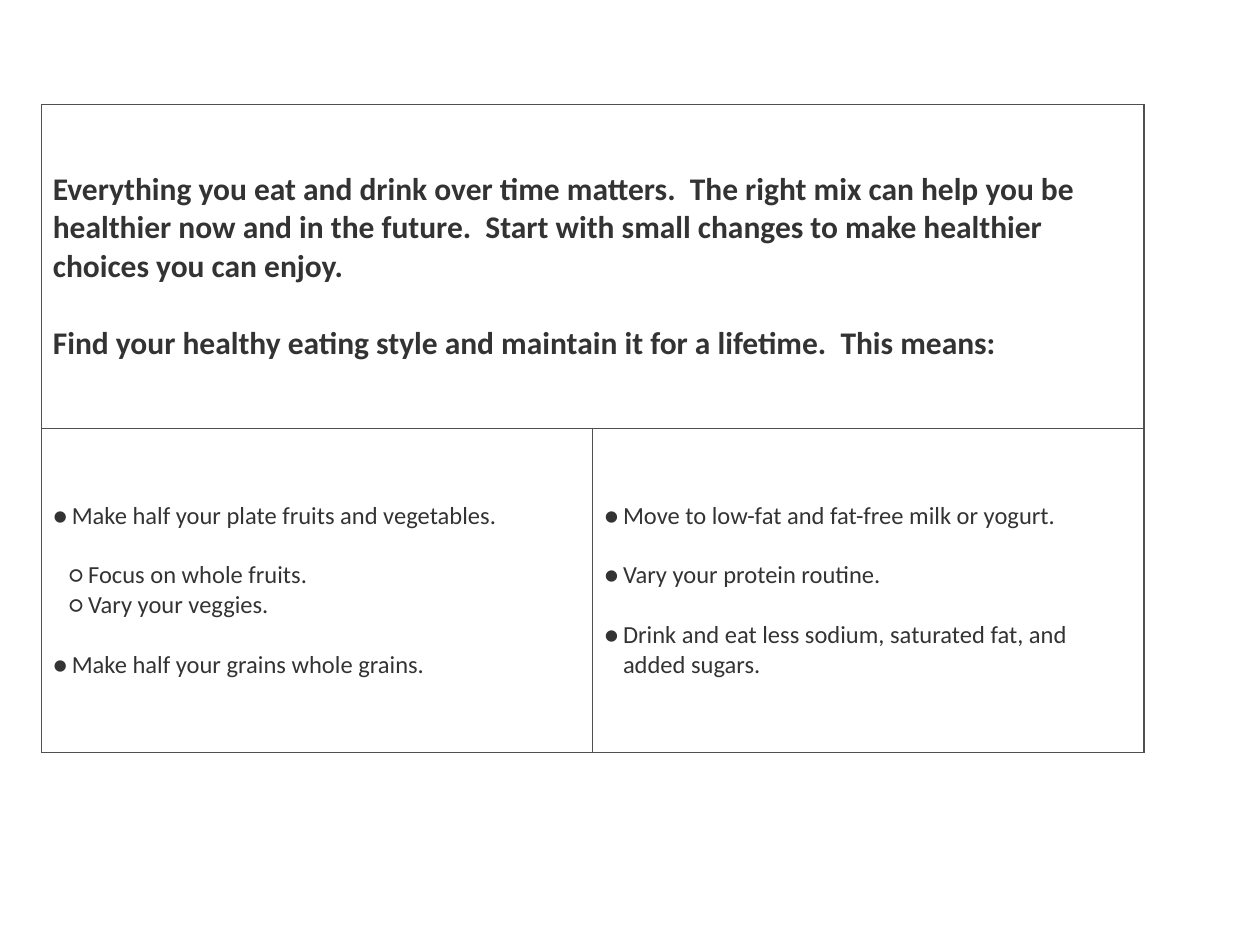
from dataclasses import dataclass

from lxml.etree import SubElement
from pptx import Presentation
from pptx.dml.color import RGBColor
from pptx.enum.text import MSO_ANCHOR
from pptx.oxml.ns import qn
from pptx.util import Inches, Pt


@dataclass(frozen=True)
class Theme:
    font: str = "Calibri"
    ink: str = "333333"
    border: str = "505050"
    paper: str = "FFFFFF"
    intro_size: int = 18
    advice_size: int = 14
    border_width: float = 0.75


theme = Theme()


def add_text(frame, text, size, bold=False, gap=0, bullet=None, level=0):
    """Fill the frame's empty first paragraph, or append one with a gap above."""
    paragraph = frame.paragraphs[0]
    if paragraph.runs:
        paragraph = frame.add_paragraph()
    paragraph.space_before = Pt(gap)
    if bullet:
        properties = paragraph._p.get_or_add_pPr()
        hang = Inches(0.15)
        properties.set("marL", str(hang + level * Inches(0.13)))
        properties.set("indent", str(-hang))
        SubElement(properties, qn("a:buFont"), typeface=theme.font)
        SubElement(properties, qn("a:buChar"), char=bullet)
    run = paragraph.add_run()
    run.text = text
    run.font.name = theme.font
    run.font.size = Pt(size)
    run.font.bold = bold
    run.font.color.rgb = RGBColor.from_string(theme.ink)


def style_cell(cell):
    """Give the cell its four borders, fill, margins and anchor."""
    properties = cell._tc.get_or_add_tcPr()
    for side in ("lnL", "lnR", "lnT", "lnB"):
        line = SubElement(properties, qn(f"a:{side}"), w=str(Pt(theme.border_width)))
        fill = SubElement(line, qn("a:solidFill"))
        SubElement(fill, qn("a:srgbClr"), val=theme.border)
    cell.fill.solid()
    cell.fill.fore_color.rgb = RGBColor.from_string(theme.paper)
    cell.margin_left = cell.margin_right = Inches(0.09)
    cell.margin_top = cell.margin_bottom = Inches(0.09)
    cell.vertical_anchor = MSO_ANCHOR.MIDDLE


prs = Presentation()
prs.slide_width, prs.slide_height = Inches(10), Inches(7.5)
slide = prs.slides.add_slide(prs.slide_layouts[6])

guide = slide.shapes.add_table(
    2, 2, Inches(0.33), Inches(0.83), Inches(8.75), Inches(5.14)
).table
guide.first_row = guide.horz_banding = False
for cell in guide.iter_cells():
    style_cell(cell)

intro = guide.cell(0, 0)
intro.merge(guide.cell(0, 1))
intro_paragraphs = [
    ("Everything you eat and drink over time matters.  The right mix can help you be "
     "healthier now and in the future.  Start with small changes to make healthier "
     "choices you can enjoy.", 0),
    ("Find your healthy eating style and maintain it for a lifetime.  This means:", 22),
]
for text, gap in intro_paragraphs:
    add_text(intro.text_frame, text, theme.intro_size, bold=True, gap=gap)

# Each entry: text, level, space above in points
advice_columns = [
    [
        ("Make half your plate fruits and vegetables.", 0, 0),
        ("Focus on whole fruits.", 1, 17),
        ("Vary your veggies.", 1, 0),
        ("Make half your grains whole grains.", 0, 17),
    ],
    [
        ("Move to low-fat and fat-free milk or yogurt.", 0, 0),
        ("Vary your protein routine.", 0, 17),
        ("Drink and eat less sodium, saturated fat, and added sugars.", 0, 17),
    ],
]
for column, advice in enumerate(advice_columns):
    frame = guide.cell(1, column).text_frame
    for text, level, gap in advice:
        add_text(frame, text, theme.advice_size, gap=gap,
                 bullet="●○"[level], level=level)

prs.save("out.pptx")
